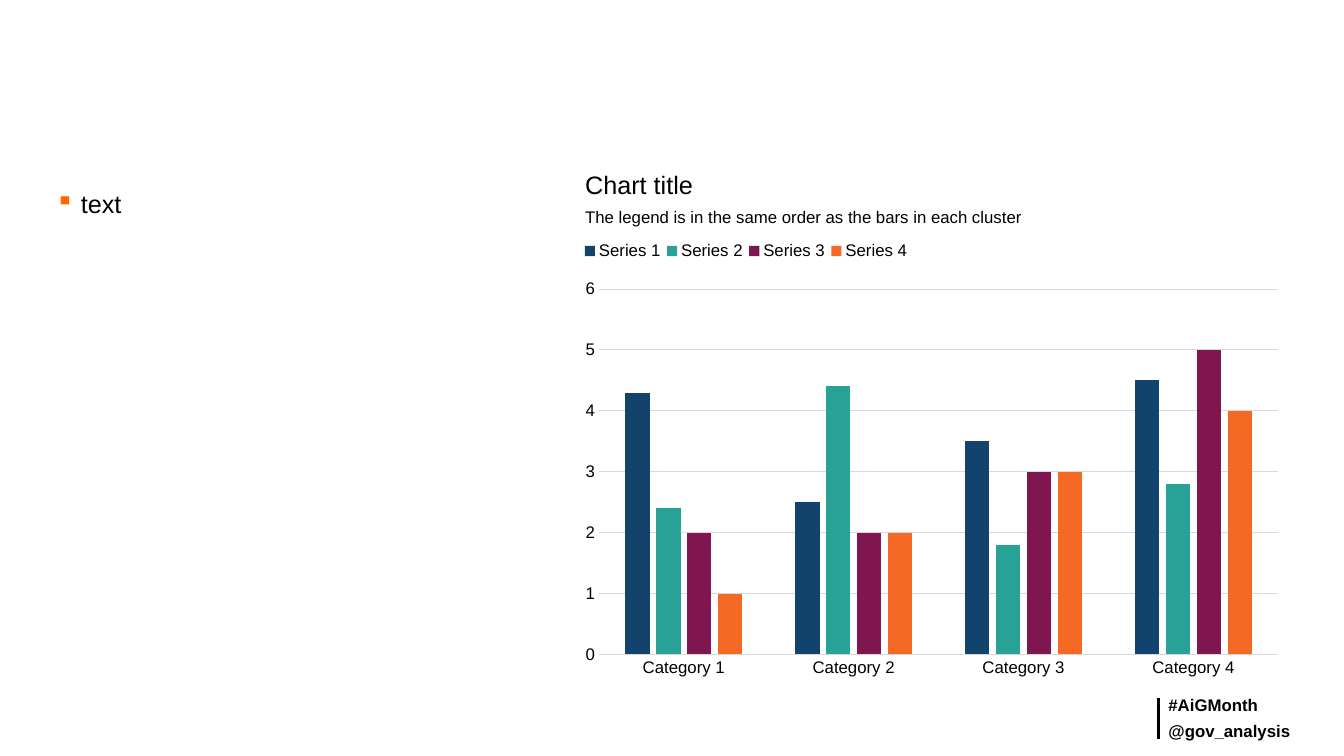
from lxml.etree import SubElement
from pptx import Presentation
from pptx.chart.data import CategoryChartData
from pptx.dml.color import RGBColor as RGB
from pptx.enum.chart import XL_CHART_TYPE as CT, XL_LEGEND_POSITION as LP, XL_TICK_MARK as TM
from pptx.oxml import parse_xml
from pptx.oxml.ns import nsdecls, qn
from pptx.util import Inches, Pt

THEME = {
    "font": "Arial", "ink": RGB.from_string("000000"), "grid": RGB.from_string("D9D9D9"),
    "bullet": "FF6900", "large": Pt(18), "small": Pt(12),
    "series": ["12436D", "28A197", "801650", "F46A25"],
}
W, H = Inches(13.33), Inches(7.5)
RIGHT = 0.428 * W  # left edge of the chart headings


def add_text(box, lines, size, wrap=True, **formats):
    """Add a text box with one paragraph per line; formats apply to each paragraph."""
    tf = slide.shapes.add_textbox(*(int(v) for v in box)).text_frame
    tf.word_wrap = wrap
    for i, line in enumerate(lines):
        p = tf.paragraphs[0] if i == 0 else tf.add_paragraph()
        r = p.add_run()
        r.text = line
        r.font.name, r.font.size = THEME["font"], size
        r.font.color.rgb = THEME["ink"]
        r.font.bold = formats.get("bold", False)
        p.line_spacing = formats.get("line_spacing", 1.0)
        p.space_before = formats.get("space_before", Pt(0)) if i else Pt(0)
    return tf


def manual_layout(target, **shares):
    """Build a chart layout element from shares of the chart's size."""
    tags = "".join(f'<c:{m}Mode val="edge"/>' for m in "xy")
    tags += "".join(f'<c:{k} val="{v}"/>' for k, v in shares.items())
    return parse_xml(f'<c:layout {nsdecls("c")}><c:manualLayout>{target}{tags}'
                     '</c:manualLayout></c:layout>')


prs = Presentation()
prs.slide_width, prs.slide_height = W, H
slide = prs.slides.add_slide(prs.slide_layouts[6])

# Footer tags and their rule
rule_x = int(0.862 * W)
add_text((rule_x, 0.915 * H, 0.124 * W, 0.073 * H), ["#AiGMonth", "@gov_analysis"],
         THEME["small"], bold=True, line_spacing=0.9, space_before=Pt(6))
rule = slide.shapes.add_connector(1, rule_x, int(0.923 * H), rule_x, int(0.977 * H))
rule.line.color.rgb, rule.line.width = THEME["ink"], Pt(1.5)
SubElement(rule._element.spPr, qn("a:effectLst"))

# Bulleted text
body = add_text((0.034 * W, 0.247 * H, 0.385 * W, 0.641 * H), ["text"],
                THEME["large"], line_spacing=0.9)
pPr = body.paragraphs[0]._p.get_or_add_pPr()
for side, indent in {"marL": 0.25, "indent": -0.25}.items():
    pPr.set(side, str(Inches(indent)))
SubElement(SubElement(pPr, qn("a:buClr")), qn("a:srgbClr")).set("val", THEME["bullet"])
SubElement(pPr, qn("a:buChar")).set("char", "▪")

# Clustered columns
data = CategoryChartData()
data.categories = [f"Category {n}" for n in range(1, 5)]
values = [(4.3, 2.5, 3.5, 4.5), (2.4, 4.4, 1.8, 2.8), (2, 2, 3, 5), (1, 2, 3, 4)]
for n, row in enumerate(values, 1):
    data.add_series(f"Series {n}", row)
box = (0.425 * W, 0.292 * H, 0.542 * W, 0.615 * H)
chart = slide.shapes.add_chart(CT.COLUMN_CLUSTERED, *(int(v) for v in box), data).chart
chart.has_title = False
chart.has_legend = True
chart.legend.position = LP.BOTTOM
chart.legend.include_in_layout = False

plot = chart.plots[0]
for name, value in {"gap_width": 219, "overlap": -27, "vary_by_categories": False}.items():
    setattr(plot, name, value)
for series, color in zip(plot.series, THEME["series"]):
    series.format.fill.solid()
    series.format.fill.fore_color.rgb = RGB.from_string(color)

cat, val = chart.category_axis, chart.value_axis
for axis in (cat, val):
    axis.major_tick_mark = axis.minor_tick_mark = TM.NONE
for font in (chart.font, cat.tick_labels.font, val.tick_labels.font, chart.legend.font):
    font.name, font.size, font.color.rgb = THEME["font"], THEME["small"], THEME["ink"]
for name, value in {"minimum_scale": 0, "maximum_scale": 6, "major_unit": 1}.items():
    setattr(val, name, value)
val.format.line.fill.background()
for line in (cat.format.line, val.major_gridlines.format.line):
    line.color.rgb, line.width = THEME["grid"], Pt(0.75)

area = plot._element.getparent()
for old in area.findall(qn("c:layout")):
    area.remove(old)
area.insert(0, manual_layout('<c:layoutTarget val="inner"/>', x=0.038, y=0.147, w=0.933, h=0.786))
legend = chart.legend._element
for old in legend.findall(qn("c:layout")):
    legend.remove(old)
legend.find(qn("c:legendPos")).addnext(manual_layout("", x=0.01, y=0.03, w=0.46, h=0.07))

# Chart headings
add_text((RIGHT, 0.217 * H, 0.096 * W, 0.053 * H), ["Chart title"], THEME["large"], wrap=False)
add_text((RIGHT, 0.267 * H, 0.343 * W, 0.04 * H),
         ["The legend is in the same order as the bars in each cluster"],
         THEME["small"], wrap=False)

prs.save("out.pptx")
